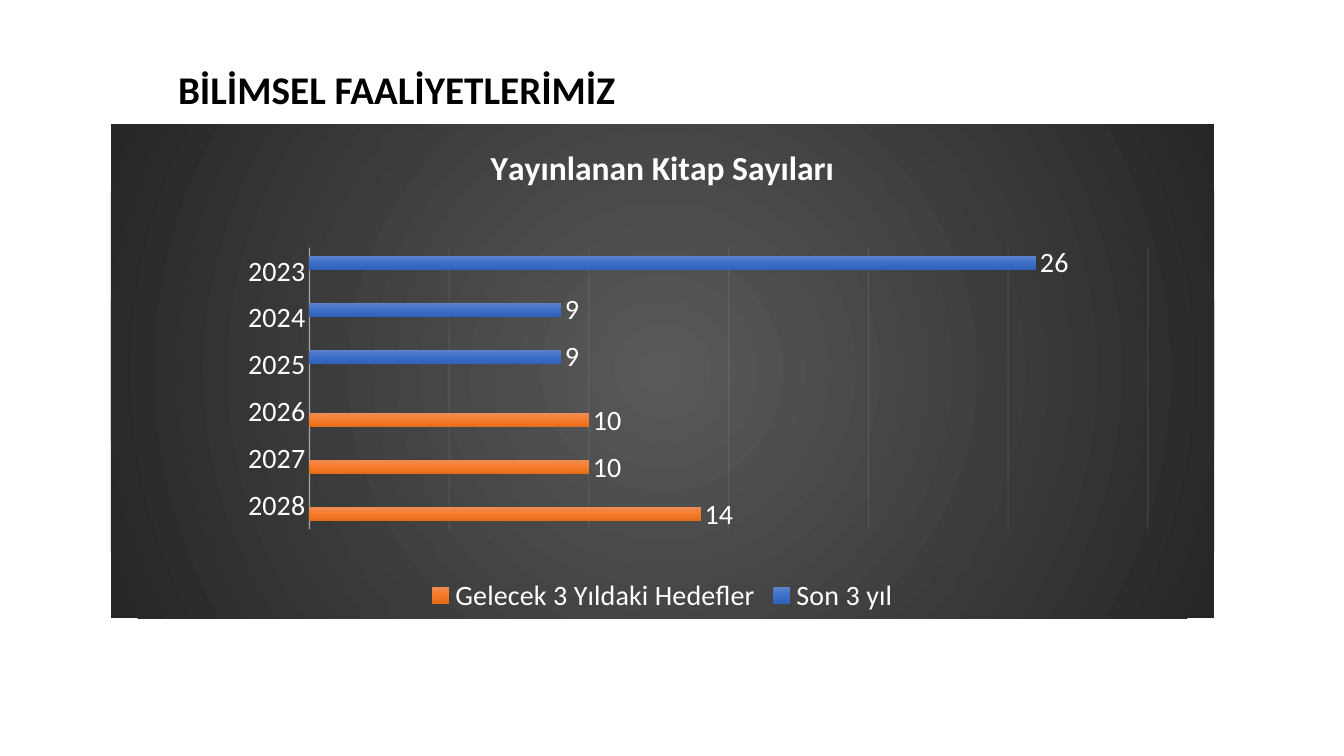
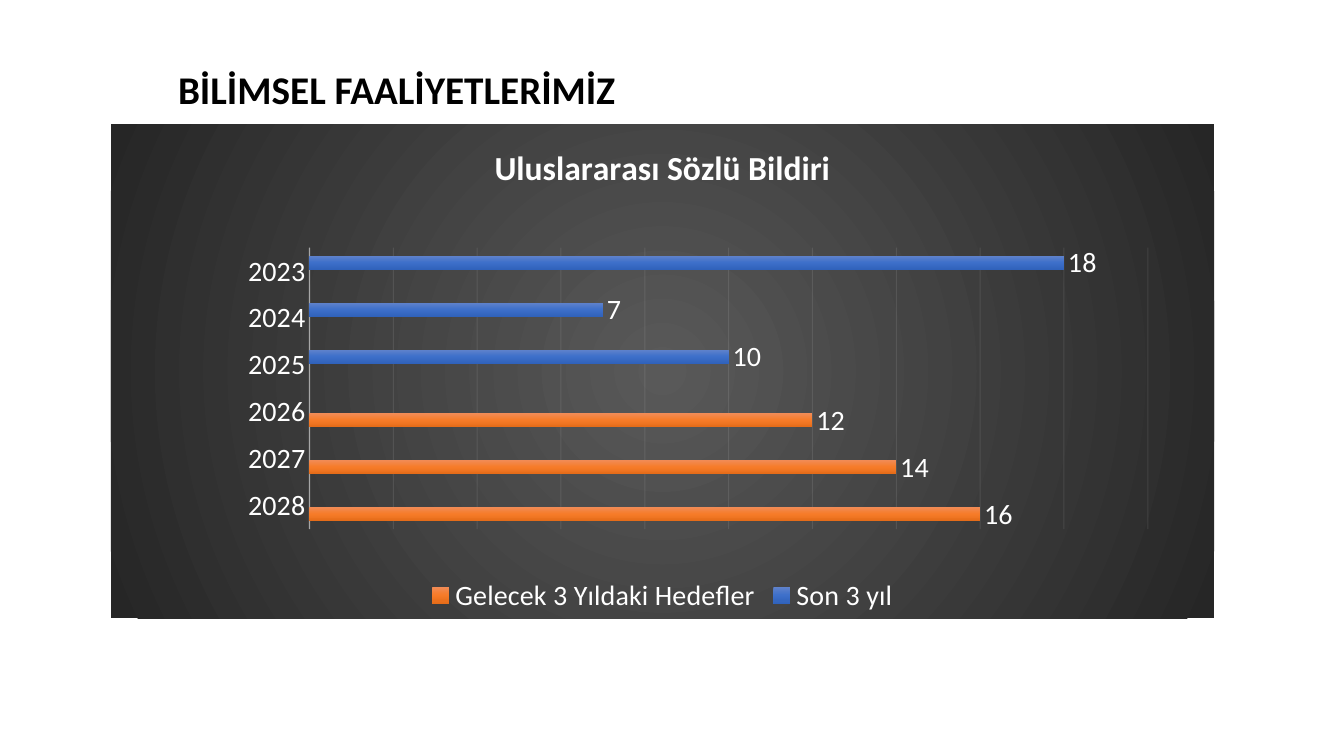
from pptx import Presentation
from pptx.chart.data import CategoryChartData
from pptx.dml.color import RGBColor
from pptx.enum import chart as ch, text
from pptx.oxml import parse_xml
from pptx.oxml.ns import nsdecls
from pptx.util import Pt

BLACK = RGBColor(0x00, 0x00, 0x00)
WHITE = RGBColor(0xFF, 0xFF, 0xFF)
AXIS_GREY = RGBColor(0xF2, 0xF2, 0xF2)
PANEL = (RGBColor(0x59, 0x59, 0x59), RGBColor(0x26, 0x26, 0x26))
BLUES = (RGBColor(0x61, 0x83, 0xCB), RGBColor(0x3E, 0x70, 0xCA), RGBColor(0x30, 0x62, 0xBB))
ORANGES = (RGBColor(0xF1, 0x8C, 0x57), RGBColor(0xF6, 0x7B, 0x28), RGBColor(0xE5, 0x6C, 0x19))

LINEAR = '<a:lin ang="5400000" scaled="0"/>'
RADIAL = '<a:path path="circle"><a:fillToRect l="50000" t="50000" r="50000" b="50000"/></a:path>'

HEADING = "BİLİMSEL FAALİYETLERİMİZ"
YEARS = ("2023", "2024", "2025", "2026", "2027", "2028")
CHARTS = (
    ("Yayınlanan Kitap Sayıları", (26, 9, 9), (10, 10, 14), 30, 5),
    ("Uluslararası Sözlü Bildiri", (18, 7, 10), (12, 14, 16), 20, 2),
)


def gradient(colors, direction):
    step = 100000 // (len(colors) - 1)
    stops = "".join(
        f'<a:gs pos="{i * step}"><a:srgbClr val="{color}"/></a:gs>'
        for i, color in enumerate(colors)
    )
    return parse_xml(
        f'<a:gradFill {nsdecls("a")} rotWithShape="1">'
        f"<a:gsLst>{stops}</a:gsLst>{direction}</a:gradFill>"
    )


class Deck:
    font = "Calibri"

    def __init__(self):
        self.prs = Presentation()
        self.prs.slide_width, self.prs.slide_height = Pt(960), Pt(540)
        self.s = None

    def add_slide(self):
        self.s = self.prs.slides.add_slide(self.prs.slide_layouts[5])

    def style(self, font, size, color, bold=False):
        font.name, font.size, font.bold = self.font, Pt(size), bold
        font.color.rgb = color

    def title(self, wording):
        sp = self.s.shapes.title
        sp.left, sp.top, sp.width, sp.height = Pt(120), Pt(28.8), Pt(582), Pt(73.4)
        tf = sp.text_frame
        tf.word_wrap = True
        tf.auto_size = text.MSO_AUTO_SIZE.NONE
        tf.vertical_anchor = text.MSO_ANCHOR.MIDDLE
        p = tf.paragraphs[0]
        p.alignment = text.PP_ALIGN.LEFT
        p.line_spacing = 0.9
        r = p.add_run()
        r.text = wording
        self.style(r.font, 28, BLACK, bold=True)

    def bar_chart(self, heading, past, targets, maximum, step):
        data = CategoryChartData()
        data.categories = YEARS
        data.add_series("Son 3 yıl", past + (None,) * 3)
        data.add_series("Gelecek 3 Yıldaki Hedefler", (None,) * 3 + targets)
        chart = self.s.shapes.add_chart(
            ch.XL_CHART_TYPE.BAR_CLUSTERED, Pt(79.2), Pt(88.6), Pt(788), Pt(353), data
        ).chart
        self.style(chart.font, 20, WHITE)
        self.chart_title(chart, heading)
        chart.has_legend = True
        chart.legend.position = ch.XL_LEGEND_POSITION.BOTTOM
        chart.legend.include_in_layout = False
        self.axes(chart, maximum, step)
        self.bars(chart.plots[0])
        self.panel(chart)
        self.plot_layout(chart, x=0.18, y=0.25, w=0.76, h=0.57)

    def chart_title(self, chart, heading):
        chart.has_title = True
        chart.chart_title.include_in_layout = False
        r = chart.chart_title.text_frame.paragraphs[0].add_run()
        r.text = heading
        self.style(r.font, 24, WHITE, bold=True)

    def axes(self, chart, maximum, step):
        years, values = chart.category_axis, chart.value_axis
        years.reverse_order = True
        years.major_tick_mark = years.minor_tick_mark = ch.XL_TICK_MARK.NONE
        values.minimum_scale, values.maximum_scale = 0, maximum
        values.major_unit = step
        values.has_major_gridlines = True
        values.visible = False
        self.faint_line(chart, years.format.line, 1, 54, "c:catAx/c:spPr")
        self.faint_line(chart, values.major_gridlines.format.line, 0.75, 10, "c:valAx/c:majorGridlines")

    def faint_line(self, chart, line, width, opacity, owner):
        line.width = Pt(width)
        line.color.rgb = AXIS_GREY
        for color in chart.element.xpath(f".//{owner}//a:srgbClr"):
            color.append(parse_xml(f'<a:alpha {nsdecls("a")} val="{opacity * 1000}"/>'))

    def bars(self, plot):
        plot.gap_width = 115
        plot.overlap = -20
        plot.vary_by_categories = False
        for series, colors in zip(plot.series, (BLUES, ORANGES)):
            series.invert_if_negative = False
            labels = series.data_labels
            labels.show_value = True
            labels.position = ch.XL_LABEL_POSITION.OUTSIDE_END
            self.style(labels.font, 20, WHITE)
            series.format.element.get_or_add_spPr().insert(0, gradient(colors, LINEAR))

    def panel(self, chart):
        sppr = parse_xml(f'<c:spPr {nsdecls("c", "a")}><a:ln><a:noFill/></a:ln></c:spPr>')
        sppr.insert(0, gradient(PANEL, RADIAL))
        chart.element.xpath("c:chart")[0].addnext(sppr)

    def plot_layout(self, chart, **box):
        area = chart.element.xpath(".//c:plotArea")[0]
        for layout in area.xpath("c:layout"):
            area.remove(layout)
        modes = '<c:xMode val="edge"/><c:yMode val="edge"/>'
        sizes = "".join(f'<c:{side} val="{share}"/>' for side, share in box.items())
        area.insert(0, parse_xml(
            f'<c:layout {nsdecls("c")}><c:manualLayout><c:layoutTarget val="inner"/>'
            f"{modes}{sizes}</c:manualLayout></c:layout>"
        ))


def main():
    deck = Deck()
    for chart in CHARTS:
        deck.add_slide()
        deck.title(HEADING)
        deck.bar_chart(*chart)
    deck.prs.save("out.pptx")


if __name__ == "__main__":
    main()
